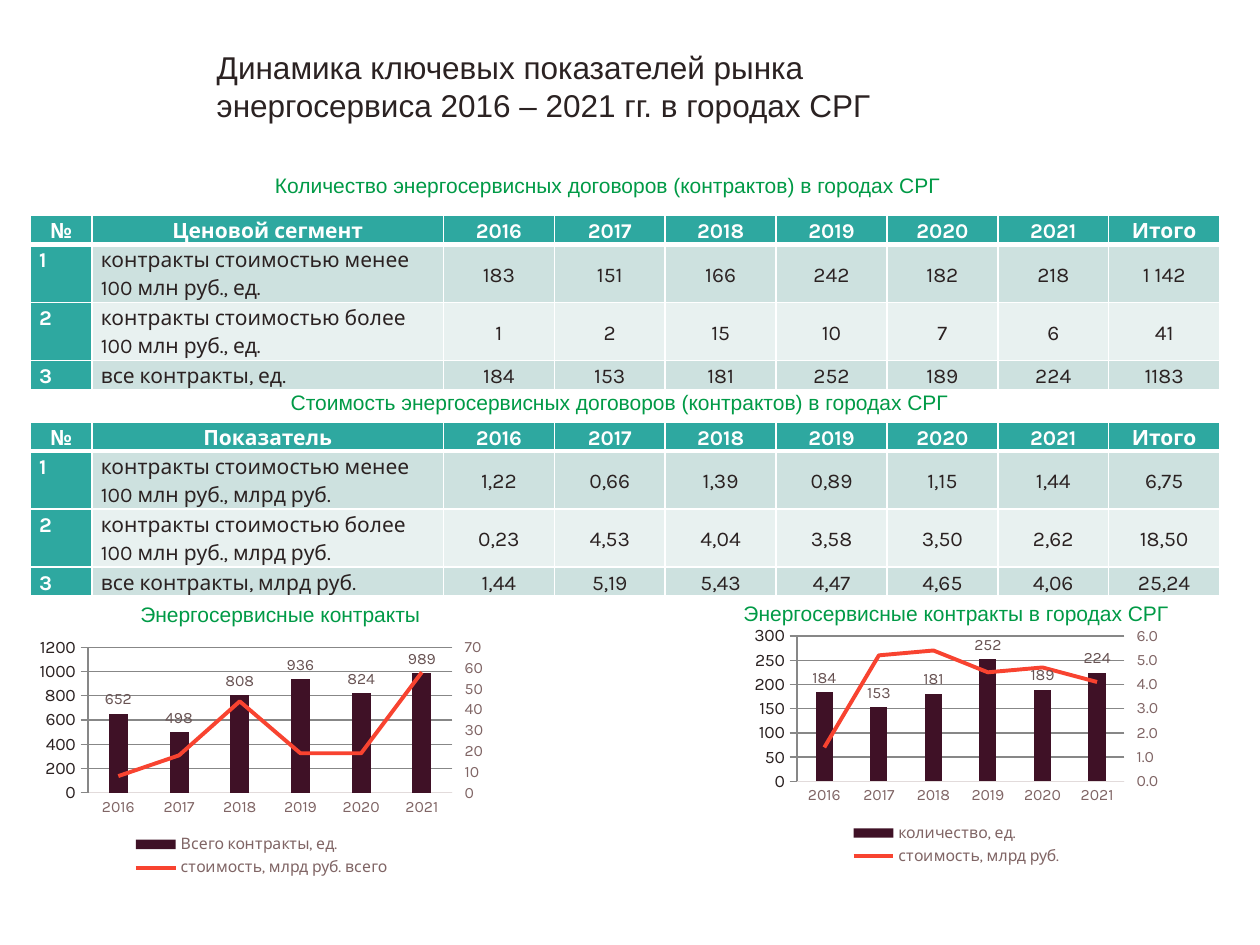
from pptx import Presentation
from pptx.chart.axis import ValueAxis
from pptx.chart.data import CategoryChartData as ChartData
from pptx.dml.color import RGBColor
from pptx.enum.chart import XL_CHART_TYPE as CT, XL_LEGEND_POSITION as LP
from pptx.enum.chart import XL_LABEL_POSITION as LabelPos, XL_MARKER_STYLE as Marker
from pptx.enum.chart import XL_TICK_MARK as Tick
from pptx.enum.text import MSO_ANCHOR as Anchor, MSO_AUTO_SIZE as Auto, PP_ALIGN as Align
from pptx.oxml import parse_xml
from pptx.oxml.ns import nsdecls, qn
from pptx.util import Inches, Pt

INK, GREEN, TEAL, WHITE = "2B2222", "009A46", "2EA8A0", "FFFFFF"
BANDS = ["CDE1DF", "E8F1F0"]
GREY, RULE, BAR, LINE = "806565", "E2DBDB", "3F1126", "F84330"
YEARS = [str(year) for year in range(2016, 2022)]

COUNTS = [
    ["№", "Ценовой сегмент", *YEARS, "Итого"],
    ["1", "контракты стоимостью менее 100 млн руб., ед.",
     "183", "151", "166", "242", "182", "218", "1 142"],
    ["2", "контракты стоимостью более 100 млн руб., ед.",
     "1", "2", "15", "10", "7", "6", "41"],
    ["3", "все контракты, ед.",
     "184", "153", "181", "252", "189", "224", "1183"],
]
COSTS = [
    ["№", "Показатель", *YEARS, "Итого"],
    ["1", "контракты стоимостью менее 100 млн руб., млрд руб.",
     "1,22", "0,66", "1,39", "0,89", "1,15", "1,44", "6,75"],
    ["2", "контракты стоимостью более 100 млн руб., млрд руб.",
     "0,23", "4,53", "4,04", "3,58", "3,50", "2,62", "18,50"],
    ["3", "все контракты, млрд руб.",
     "1,44", "5,19", "5,43", "4,47", "4,65", "4,06", "25,24"],
]


def rgb(code):
    return RGBColor.from_string(code)


def set_font(font, size, color, name="Karla", bold=False):
    font.size, font.name, font.bold = Pt(size), name, bold
    font.color.rgb = rgb(color)


def add_text(slide, text, box, size=12, color=GREEN, align=Align.CENTER,
             anchor=Anchor.MIDDLE, inset=(0.06, 0.03), spacing=None):
    frame = slide.shapes.add_textbox(*map(Inches, box)).text_frame
    frame.word_wrap = True
    frame.auto_size = Auto.SHAPE_TO_FIT_TEXT
    frame.vertical_anchor = anchor
    frame.margin_left = frame.margin_right = Inches(inset[0])
    frame.margin_top = frame.margin_bottom = Inches(inset[1])
    frame.text = text
    para = frame.paragraphs[0]
    para.alignment, para.line_spacing = align, spacing
    set_font(para.runs[0].font, size, color, "Arial")


def add_borders(cell, bottom):
    props = cell._tc.get_or_add_tcPr()
    for side, width in zip("LRTB", (1, 1, 1, bottom)):
        props.append(parse_xml(
            f'<a:ln{side} {nsdecls("a")} w="{int(Pt(width))}"><a:solidFill>'
            f'<a:srgbClr val="{WHITE}"/></a:solidFill></a:ln{side}>'))


def fill_cell(cell, text, row, col):
    head = row == 0
    strong = head or col == 0
    cell.margin_left = cell.margin_right = Inches(0.07)
    cell.margin_top = cell.margin_bottom = 0
    if not head and col > 1:
        cell.vertical_anchor = Anchor.MIDDLE
    add_borders(cell, 3 if head else 1)
    cell.fill.solid()
    cell.fill.fore_color.rgb = rgb(TEAL if strong else BANDS[(row - 1) % 2])
    cell.text_frame.text = text
    para = cell.text_frame.paragraphs[0]
    para.alignment = Align.CENTER if head or col > 1 else Align.LEFT
    para.line_spacing, para.space_after = 1.15, Pt(6)
    set_font(para.runs[0].font, 12, WHITE if strong else INK, bold=strong)


def add_grid(slide, rows, top):
    widths = [0.49, 2.79] + [0.88] * 7
    table = slide.shapes.add_table(
        len(rows), len(widths), Inches(0.24), Inches(top),
        Inches(sum(widths)), Inches(0.18 * len(rows))).table
    for col, width in zip(table.columns, widths):
        col.width = Inches(width)
    for r, row in enumerate(rows):
        for c, text in enumerate(row):
            fill_cell(table.cell(r, c), text, r, c)


def split_line(chart):
    """Move the second series to a line plot on a right axis; return that axis."""
    area = chart._chartSpace.chart.plotArea
    bars = area.find(qn("c:barChart"))
    ser = bars.findall(qn("c:ser"))[1]
    for flag in ser.findall(qn("c:invertIfNegative")):
        ser.remove(flag)
    line = parse_xml(
        f'<c:lineChart {nsdecls("c")}><c:grouping val="standard"/>'
        '<c:varyColors val="0"/><c:marker val="1"/>'
        '<c:axId val="501"/><c:axId val="502"/></c:lineChart>')
    line.insert(2, ser)
    bars.addnext(line)

    def axis(kind, own, other, hide, pos, cross):
        return parse_xml(
            f'<c:{kind} {nsdecls("c")}><c:axId val="{own}"/><c:scaling>'
            f'<c:orientation val="minMax"/></c:scaling><c:delete val="{hide}"/>'
            f'<c:axPos val="{pos}"/><c:crossAx val="{other}"/>'
            f'<c:crosses val="{cross}"/></c:{kind}>')

    right = axis("valAx", 502, 501, 0, "r", "max")
    last = area.findall(qn("c:valAx"))[-1]
    last.addnext(right)
    right.addnext(axis("catAx", 501, 502, 1, "b", "autoZero"))
    return ValueAxis(right)


def style_axis(axis, tick, code="General"):
    axis.major_tick_mark, axis.minor_tick_mark = tick, Tick.NONE
    labels = axis.tick_labels
    set_font(labels.font, 9, GREY)
    labels.number_format, labels.number_format_is_linked = code, False


def style_line(line, color, width):
    line.color.rgb, line.width = rgb(color), Pt(width)


def add_combo(slide, box, bars, line, code):
    data = ChartData()
    data.categories = YEARS
    for name, vals in (bars, line):
        data.add_series(name, vals)
    chart = slide.shapes.add_chart(
        CT.COLUMN_CLUSTERED, *map(Inches, box), data).chart
    set_font(chart.font, 10, INK)
    chart.has_title = False
    chart.has_legend = True
    chart.legend.position = LP.BOTTOM
    chart.legend.include_in_layout = False
    set_font(chart.legend.font, 9, GREY)

    right = split_line(chart)
    style_axis(chart.category_axis, Tick.NONE)
    style_axis(chart.value_axis, Tick.NONE)
    style_axis(right, Tick.OUTSIDE, code)
    right.has_major_gridlines = False
    style_line(chart.category_axis.format.line, RULE, 0.75)
    style_line(chart.value_axis.major_gridlines.format.line, RULE, 0.75)
    for axis in (chart.value_axis, right):
        axis.format.line.fill.background()

    cols, trend = chart.plots
    cols.gap_width, cols.overlap, cols.vary_by_categories = 219, -27, False
    fill = cols.series[0].format.fill
    fill.solid()
    fill.fore_color.rgb = rgb(BAR)
    labels = cols.series[0].data_labels
    labels.show_value, labels.position = True, LabelPos.OUTSIDE_END
    set_font(labels.font, 9, "675252")
    curve = trend.series[0]
    curve.smooth = False
    curve.marker.style = Marker.NONE
    style_line(curve.format.line, LINE, 2.25)


def main():
    deck = Presentation()
    deck.slide_width, deck.slide_height = Inches(10), Inches(7.5)
    slide = deck.slides.add_slide(deck.slide_layouts[6])
    add_text(slide, "Количество энергосервисных договоров (контрактов) в городах СРГ",
             (2.06, 1.34, 5.53, 0.26))
    add_text(slide, "Динамика ключевых показателей рынка энергосервиса "
             "2016 – 2021 гг. в городах СРГ", (1.65, 0.35, 5.82, 0.67), 18, INK,
             Align.LEFT, Anchor.TOP, (0.07, 0.03))
    add_text(slide, "Стоимость энергосервисных договоров (контрактов) в городах СРГ",
             (1.65, 3.06, 6.54, 0.26))
    add_grid(slide, COUNTS, 1.71)
    add_grid(slide, COSTS, 3.35)
    add_combo(slide, (0.24, 5.02, 3.67, 1.98),
              ("Всего контракты, ед.", [652, 498, 808, 936, 824, 989]),
              ("стоимость, млрд руб. всего", [8, 18, 44, 19, 19, 58]), "0")
    add_combo(slide, (5.92, 4.93, 3.34, 1.98),
              ("количество, ед.", [184, 153, 181, 252, 189, 224]),
              ("стоимость, млрд руб.", [1.4, 5.2, 5.4, 4.5, 4.7, 4.1]), "0.0")
    add_text(slide, "Энергосервисные контракты", (0.98, 4.74, 2.49, 0.26))
    add_text(slide, "Энергосервисные контракты в городах СРГ", (5.09, 4.69, 5, 0.31),
             anchor=Anchor.TOP, inset=(0.1, 0.05), spacing=1.15)
    deck.save("out.pptx")


if __name__ == "__main__":
    main()
